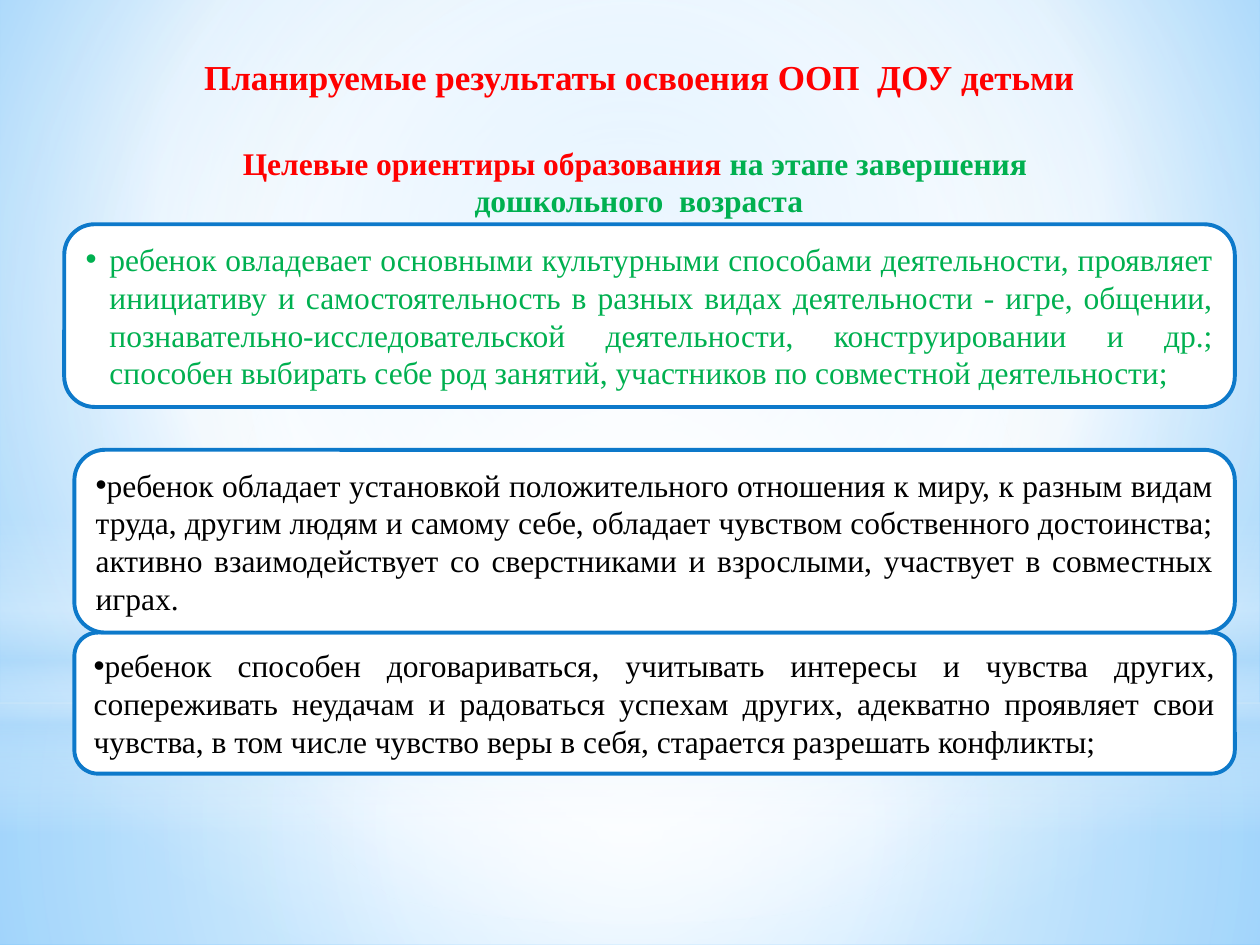
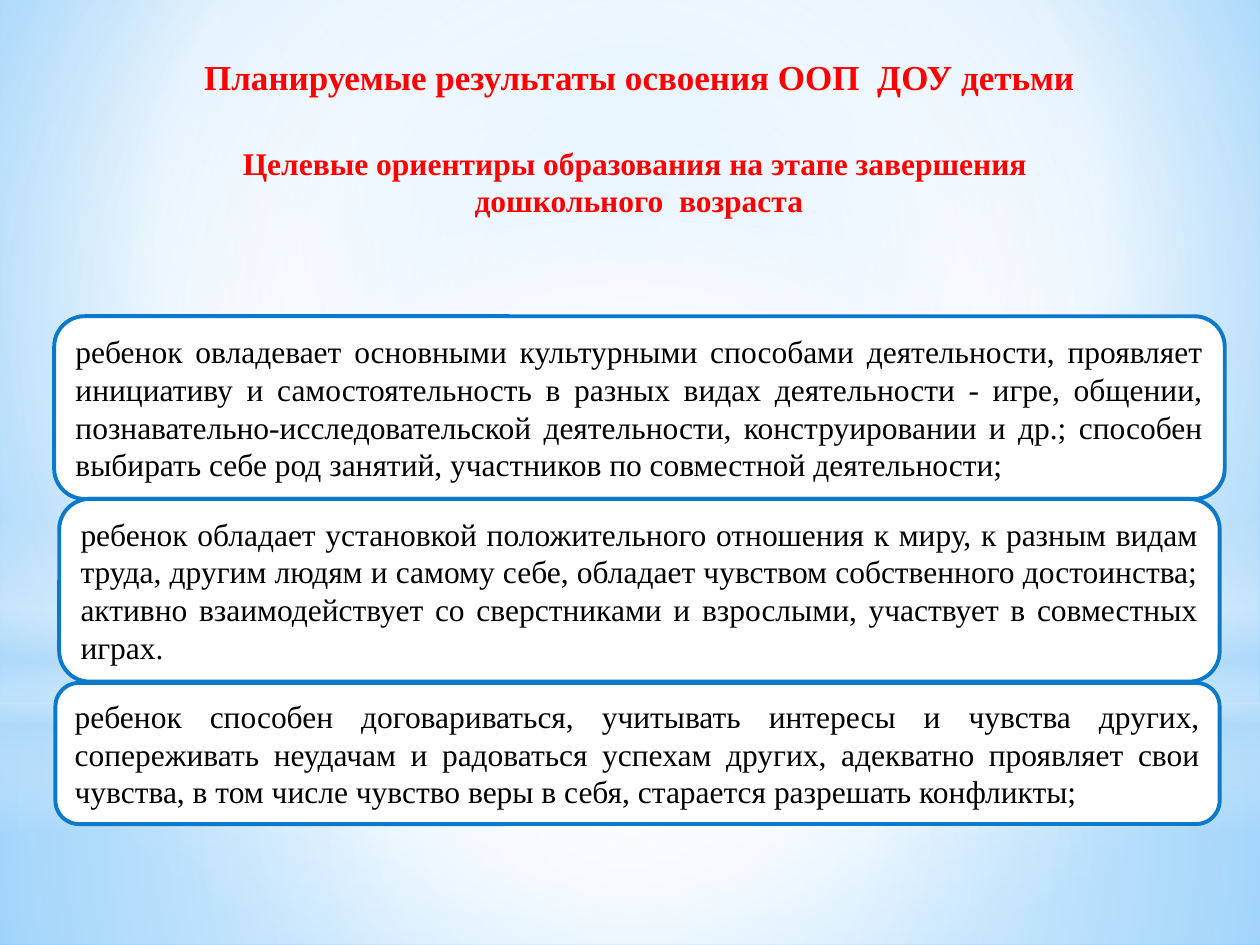
"""Build two slides on the planned results of a preschool programme."""
from lxml import etree
from pptx import Presentation
from pptx.dml.color import RGBColor
from pptx.enum import shapes, text
from pptx.oxml.ns import qn
from pptx.util import Inches, Pt

THEME = {
    "red": "FF0000", "green": "00B050", "black": "000000", "white": "FFFFFF",
    "border": "0D79CA", "sky": "B4DCFA", "sky_light": "9ED5FF", "sky_deep": "5BB9FF",
    "title": {"name": "Times New Roman", "size": Pt(20), "bold": True},
    "subtitle": {"name": "Times New Roman", "size": Pt(18), "bold": True},
    "body": {"name": "Times New Roman", "size": Pt(18), "bold": False},
    "border_width": Pt(2.25),
}
CENTRE = (50, 50, 50, 50)
RECTANGLE, OVAL = shapes.MSO_SHAPE.RECTANGLE, shapes.MSO_SHAPE.OVAL

BACKDROP = [
    (RECTANGLE, (0, 5.58, 10, 1.92), CENTRE,
     [(0, "white", 91), (37, "white", 76), (100, "sky", 79)]),
    (RECTANGLE, (0, 0, 10, 5.58), CENTRE,
     [(0, "white", 89), (48, "white", 62), (100, "sky", 79)]),
    (RECTANGLE, (0, 4.12, 10, 2.5), None,
     [(0, "white", 0), (29, "white", 30), (45, "sky", 40),
      (55, "white", 26), (65, "sky", 60), (100, "white", 0)]),
    (OVAL, (0, 1.75, 10, 5.58), CENTRE, [(0, "white", 100), (56, "white", 0)]),
]

TITLE = "Планируемые результаты освоения ООП  ДОУ детьми"
SUBTITLE = ["Целевые ориентиры образования ", "на этапе завершения", " дошкольного  возраста"]
ACTIVITY = (
    "ребенок овладевает основными культурными способами деятельности, проявляет "
    "инициативу и самостоятельность в разных видах деятельности - игре, общении, "
    "познавательно-исследовательской деятельности, конструировании и др.; способен "
    "выбирать себе род занятий, участников по совместной деятельности;")
EMPATHY = (
    "ребенок cпособен договариваться, учитывать интересы и чувства других, "
    "сопереживать неудачам и радоваться успехам других, адекватно проявляет свои "
    "чувства, в том числе чувство веры в себя, старается разрешать конфликты;")
ATTITUDE = (
    "ребенок обладает установкой положительного отношения к миру, к разным видам "
    "труда, другим людям и самому себе, обладает чувством собственного достоинства; "
    "активно взаимодействует со сверстниками и взрослыми, участвует в совместных играх.")

SLIDES = [
    {"stage_color": "green", "bullets": True, "cards": [
        (ACTIVITY, (0.51, 1.78, 9.29, 1.45), "green", 0.19),
        (EMPATHY, (0.59, 5.02, 9.21, 1.12), "black", 0),
        (ATTITUDE, (0.59, 3.57, 9.21, 1.45), "black", 0)]},
    {"stage_color": "red", "bullets": False, "cards": [
        (ACTIVITY, (0.43, 2.51, 9.29, 1.45), "black", 0),
        (EMPATHY, (0.44, 5.42, 9.24, 1.12), "black", 0),
        (ATTITUDE, (0.47, 3.96, 9.21, 1.45), "black", 0)]},
]


def paint_gradient(owner, fill, stops, focus):
    """Fill with a circular gradient around focus, or a vertical one without it."""
    fill.gradient()
    gradient = owner.element.find(".//" + qn("a:gradFill"))
    for child in list(gradient):
        gradient.remove(child)
    stop_list = etree.SubElement(gradient, qn("a:gsLst"))
    for position, color, opacity in stops:
        stop = etree.SubElement(stop_list, qn("a:gs"), pos=str(position * 1000))
        tint = etree.SubElement(stop, qn("a:srgbClr"), val=THEME[color])
        etree.SubElement(tint, qn("a:alpha"), val=str(opacity * 1000))
    if focus:
        circle = etree.SubElement(gradient, qn("a:path"), path="circle")
        sides = {side: str(share * 1000) for side, share in zip("ltrb", focus)}
        etree.SubElement(circle, qn("a:fillToRect"), **sides)
    else:
        etree.SubElement(gradient, qn("a:lin"), ang="5400000", scaled="0")


def write_paragraph(paragraph, runs, style, alignment=text.PP_ALIGN.CENTER):
    """Write (wording, colour) runs in one theme style."""
    paragraph.alignment = alignment
    for wording, color in runs:
        run = paragraph.add_run()
        run.text = wording
        for attribute, value in THEME[style].items():
            setattr(run.font, attribute, value)
        run.font.color.rgb = RGBColor.from_string(THEME[color])


presentation = Presentation()
presentation.slide_width, presentation.slide_height = Inches(10), Inches(7.5)
master = presentation.slide_master
paint_gradient(master, master.background.fill,
               [(0, "sky_light", 100), (60, "white", 100), (100, "sky_deep", 100)],
               (20, 10, 20, 60))

for content in SLIDES:
    slide = presentation.slides.add_slide(presentation.slide_layouts[6])

    for preset, place, focus, stops in BACKDROP:
        shape = slide.shapes.add_shape(preset, *map(Inches, place))
        shape.shadow.inherit = False
        shape.line.fill.background()
        paint_gradient(shape, shape.fill, stops, focus)

    stage_color = content["stage_color"]
    headings = [
        ((1.17, 0.39, 7.81, 0.44), "title", [[(TITLE, "red")]]),
        ((0.51, 1.09, 9.06, 6.16), "subtitle",
         [[(SUBTITLE[0], "red"), (SUBTITLE[1], stage_color)],
          [(SUBTITLE[2], stage_color)]]),
    ]
    for place, style, lines in headings:
        frame = slide.shapes.add_textbox(*map(Inches, place)).text_frame
        frame.word_wrap = True
        for index, runs in enumerate(lines):
            paragraph = frame.add_paragraph() if index else frame.paragraphs[0]
            write_paragraph(paragraph, runs, style)

    for wording, place, color, indent in content["cards"]:
        card = slide.shapes.add_shape(shapes.MSO_SHAPE.ROUNDED_RECTANGLE, *map(Inches, place))
        card.shadow.inherit = False
        card.fill.solid()
        card.fill.fore_color.rgb = RGBColor.from_string(THEME["white"])
        card.line.color.rgb = RGBColor.from_string(THEME["border"])
        card.line.width = THEME["border_width"]
        card.text_frame.word_wrap = True
        card.text_frame.vertical_anchor = text.MSO_ANCHOR.MIDDLE
        paragraph = card.text_frame.paragraphs[0]
        write_paragraph(paragraph, [(wording, color)], "body", text.PP_ALIGN.JUSTIFY)
        if content["bullets"]:
            properties = paragraph._p.get_or_add_pPr()
            properties.set("marL", str(Inches(indent)))
            properties.set("indent", str(-Inches(indent)))
            etree.SubElement(properties, qn("a:buFont"), typeface="Arial")
            etree.SubElement(properties, qn("a:buChar"), char="•")

presentation.save("out.pptx")
